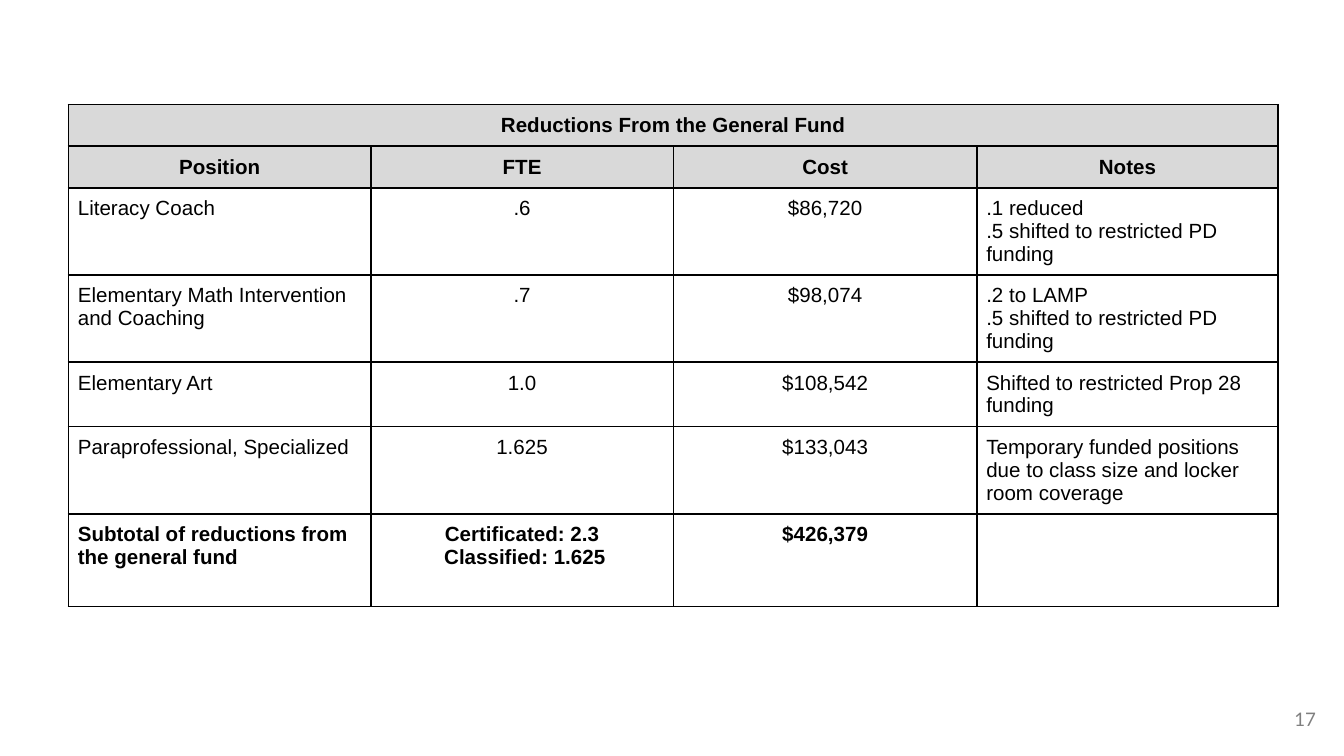
from lxml.etree import SubElement
from pptx import Presentation
from pptx.dml.color import RGBColor
from pptx.enum.text import MSO_ANCHOR as Anchor, PP_ALIGN as Align
from pptx.oxml.ns import qn
from pptx.util import Pt


def style(para, size, name, color, bold=False):
    font = para.font
    font.size, font.name, font.bold = Pt(size), name, bold
    font.color.rgb = RGBColor.from_string(color)


def border(cell, color, width):
    props = cell._tc.get_or_add_tcPr()
    for side in ("a:lnL", "a:lnR", "a:lnT", "a:lnB"):
        line = SubElement(props, qn(side), w=str(Pt(width)))
        fill = SubElement(line, qn("a:solidFill"))
        SubElement(fill, qn("a:srgbClr"), val=color)


rows = [
    ("Reductions From the General Fund", "", "", ""),
    ("Position", "FTE", "Cost", "Notes"),
    ("Literacy Coach", ".6", "$86,720",
     ".1 reduced\n.5 shifted to restricted PD funding"),
    ("Elementary Math Intervention and Coaching", ".7", "$98,074",
     ".2 to LAMP\n.5 shifted to restricted PD funding"),
    ("Elementary Art", "1.0", "$108,542",
     "Shifted to restricted Prop 28 funding"),
    ("Paraprofessional, Specialized", "1.625", "$133,043",
     "Temporary funded positions due to class size and locker room coverage"),
    ("Subtotal of reductions from the general fund",
     "Certificated: 2.3\n Classified: 1.625", "$426,379", ""),
]
widths = [162, 162, 162.7, 161.3]
heights = [22.3, 22.3, 46.7, 46.7, 34.5, 46.7, 49.7]

deck = Presentation()
deck.slide_width, deck.slide_height = Pt(720), Pt(405)
slide = deck.slides.add_slide(deck.slide_layouts[6])

frame = slide.shapes.add_table(
    len(rows), len(widths), Pt(36.7), Pt(56), Pt(sum(widths)), Pt(sum(heights)))
table = frame.table
table.first_row = table.horz_banding = False
for col, width in zip(table.columns, widths):
    col.width = Pt(width)
for row, height in zip(table.rows, heights):
    row.height = Pt(height)
table.cell(0, 0).merge(table.cell(0, 3))

for r, row in enumerate(rows):
    head = r < 2
    for c, text in enumerate(row):
        cell = table.cell(r, c)
        border(cell, "000000", 1)
        if head:
            cell.fill.solid()
            cell.fill.fore_color.rgb = RGBColor.from_string("D9D9D9")
        else:
            cell.fill.background()
        cell.margin_left = cell.margin_right = Pt(5)
        cell.margin_top = cell.margin_bottom = Pt(5)
        cell.text = text
        for para in cell.text_frame.paragraphs:
            para.alignment = Align.CENTER if head or c in (1, 2) else Align.LEFT
            style(para, 11, "Arial", "000000", head or r == len(rows) - 1)

box = slide.shapes.add_textbox(Pt(669), Pt(369.5), Pt(43), Pt(31)).text_frame
box.word_wrap = True
box.vertical_anchor = Anchor.MIDDLE
box.margin_left = box.margin_right = box.margin_top = box.margin_bottom = Pt(7.2)
box.text = "17"
para = box.paragraphs[0]
para.alignment = Align.RIGHT
style(para, 10, "Lato", "7F7F7F")

deck.save("out.pptx")
